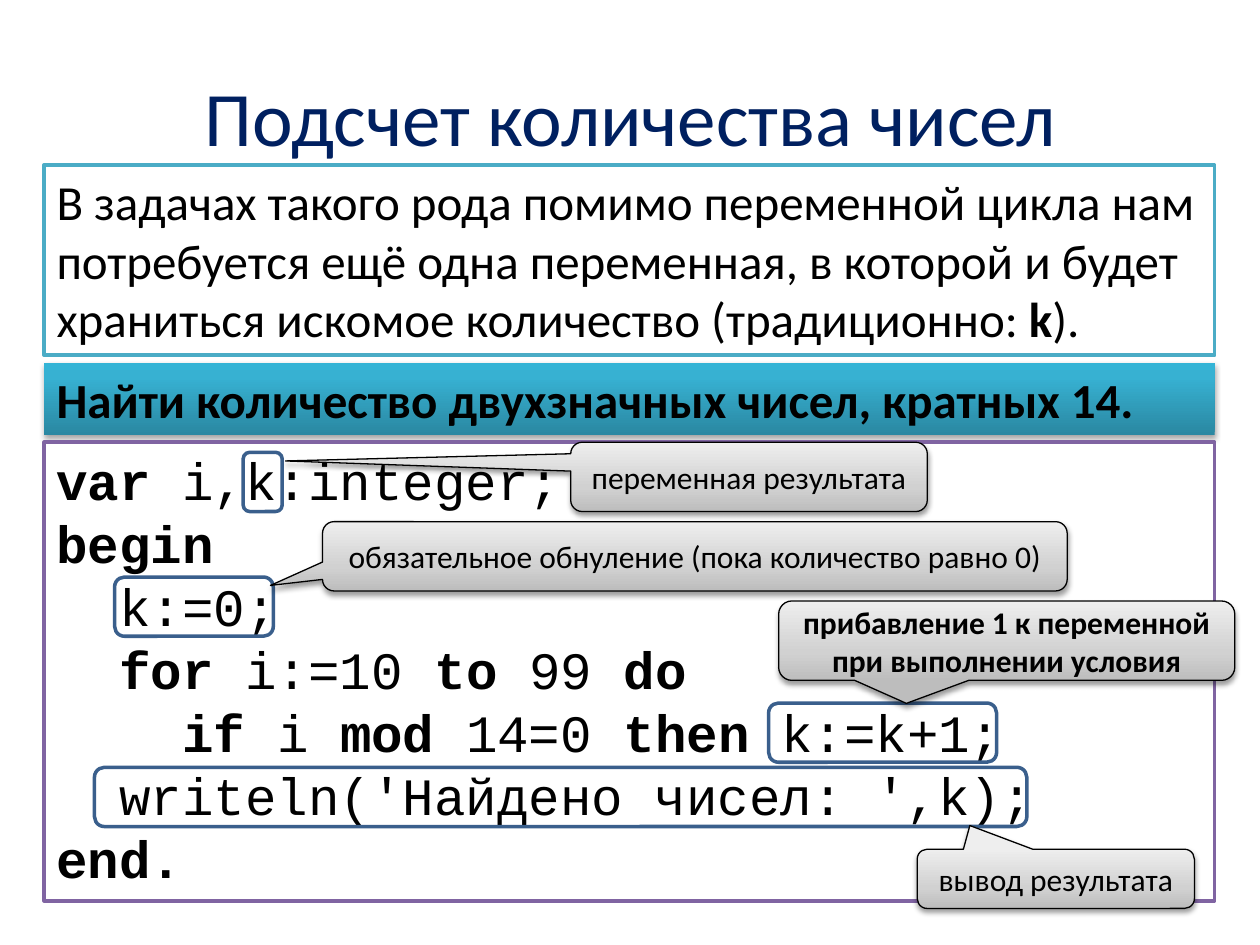
from dataclasses import dataclass

from lxml import etree
from pptx import Presentation
from pptx.dml.color import RGBColor
from pptx.enum.shapes import MSO_SHAPE
from pptx.enum.text import MSO_ANCHOR, PP_ALIGN
from pptx.oxml.ns import qn
from pptx.util import Inches, Pt

RECTANGLE = MSO_SHAPE.RECTANGLE
ROUNDED = MSO_SHAPE.ROUNDED_RECTANGLE
CALLOUT = MSO_SHAPE.ROUNDED_RECTANGULAR_CALLOUT
LEFT, CENTER = PP_ALIGN.LEFT, PP_ALIGN.CENTER
TOP, MIDDLE = MSO_ANCHOR.TOP, MSO_ANCHOR.MIDDLE


@dataclass(frozen=True)
class Theme:
    font: str = "Calibri"
    code_font: str = "Courier New"
    title_size: int = 44
    body_size: int = 28
    code_size: int = 30
    note_size: int = 18
    title: str = "002060"
    text: str = "000000"
    paper: str = "FFFFFF"
    intro_line: str = "4BACC6"
    code_line: str = "8064A2"
    frame_line: str = "3A5F8C"
    task_stops: tuple = ((0, "2A88A2"), (80, "37B1D2"), (100, "34B4D6"))
    note_stops: tuple = ((0, "BDBDBD"), (35, "D1D1D1"), (100, "EEEEEE"))


THEME = Theme()
PANEL_LEFT, PANEL_WIDTH = 0.35, 9.29
CODE_INDENT = 0.5  # two characters of the code font

# Each line of code: indent level, then (text, bold) spans
CODE = (
    (0, (("var ", True), ("i,k:integer;", False))),
    (0, (("begin", True),)),
    (1, (("k:=0;", False),)),
    (1, (("for ", True), ("i:=10 ", False), ("to", True), (" 99 ", False), ("do", True))),
    (2, (("if ", True), ("i ", False), ("mod ", True), ("14=0 ", False),
         ("then", True), (" k:=k+1;", False))),
    (1, (("writeln('Найдено чисел: ',k);", False),)),
    (0, (("end.", True),)),
)

# Each remark: framed code, callout box, callout tip, text, bold
REMARKS = (
    ((1.93, 3.59, 0.31, 0.47), (4.53, 3.51, 2.83, 0.55), (-1.3, -0.23),
     "переменная результата", False),
    ((0.91, 4.58, 1.26, 0.47), (2.56, 4.14, 5.91, 0.55), (-0.57, 0.42),
     "обязательное обнуление (пока количество равно 0)", False),
    ((6.1, 5.58, 1.81, 0.47), (6.18, 4.77, 3.62, 0.63), (-0.22, 0.79),
     "прибавление 1 к переменной при выполнении условия", True),
    ((0.75, 6.09, 7.4, 0.47), (7.28, 6.74, 2.2, 0.47), (-0.31, -0.9),
     "вывод результата", False),
)


def add_box(page, kind, box, fill=None, line=None, line_width=2):
    shape = page.shapes.add_shape(kind, *(Inches(value) for value in box))
    shape.shadow.inherit = False
    if fill:
        shape.fill.solid()
        shape.fill.fore_color.rgb = RGBColor.from_string(fill)
    else:
        shape.fill.background()
    if line:
        shape.line.color.rgb = RGBColor.from_string(line)
        shape.line.width = Pt(line_width)
    else:
        shape.line.fill.background()
    return shape


def set_gradient(shape, stops):
    """Fill from bottom to top with (percent, colour) stops."""
    shape.fill.gradient()
    shape.fill.gradient_angle = 90
    stop_list = shape.element.spPr.find(qn("a:gradFill")).find(qn("a:gsLst"))
    for old_stop in list(stop_list):
        stop_list.remove(old_stop)
    for percent, color in stops:
        stop = etree.SubElement(stop_list, qn("a:gs"), pos=str(percent * 1000))
        etree.SubElement(stop, qn("a:srgbClr"), val=color)


def set_shadow(shape, opacity):
    effects = shape.element.spPr.find(qn("a:effectLst"))
    shadow = etree.SubElement(effects, qn("a:outerShdw"), blurRad=str(Pt(3.1)),
                              dist=str(Pt(1.8)), dir="5400000", rotWithShape="0")
    color = etree.SubElement(shadow, qn("a:srgbClr"), val=THEME.text)
    etree.SubElement(color, qn("a:alpha"), val=str(opacity * 1000))


def write(shape, lines, size, font=THEME.font, color=THEME.text, align=LEFT, anchor=TOP):
    """Write lines, each an indent level with its (text, bold) spans."""
    frame = shape.text_frame
    frame.word_wrap = True
    frame.vertical_anchor = anchor
    for index, (level, spans) in enumerate(lines):
        para = frame.add_paragraph() if index else frame.paragraphs[0]
        para.alignment = align
        if level:
            para._p.get_or_add_pPr().set("marL", str(Inches(level * CODE_INDENT)))
        for text, bold in spans:
            span = para.add_run()
            span.text = text
            span.font.name = font
            span.font.size = Pt(size)
            span.font.bold = bold
            span.font.color.rgb = RGBColor.from_string(color)


def add_title(page, box):
    title = page.shapes.add_textbox(*(Inches(value) for value in box))
    write(title, [(0, [("Подсчет количества чисел", False)])], THEME.title_size,
          color=THEME.title, align=CENTER, anchor=MIDDLE)


def add_intro(page, box):
    panel = add_box(page, RECTANGLE, box, THEME.paper, THEME.intro_line)
    spans = [
        ("В задачах такого рода помимо переменной цикла нам потребуется ещё одна "
         "переменная, в которой и будет храниться искомое количество (традиционно: ", False),
        ("k", True),
        (").", False),
    ]
    write(panel, [(0, spans)], THEME.body_size)


def add_task(page, box):
    banner = add_box(page, RECTANGLE, box)
    set_gradient(banner, THEME.task_stops)
    set_shadow(banner, 35)
    write(banner, [(0, [("Найти количество двухзначных чисел, кратных 14.", True)])],
          THEME.body_size)


def add_code(page, box):
    panel = add_box(page, RECTANGLE, box, THEME.paper, THEME.code_line)
    write(panel, CODE, THEME.code_size, font=THEME.code_font)


def add_remark(page, frame_box, note_box, tip, text, bold):
    """Frame a piece of code and point a callout at it."""
    add_box(page, ROUNDED, frame_box, line=THEME.frame_line)
    note = add_box(page, CALLOUT, note_box, line=THEME.text, line_width=0.75)
    note.adjustments[0], note.adjustments[1] = tip
    set_gradient(note, THEME.note_stops)
    set_shadow(note, 38)
    write(note, [(0, [(text, bold)])], THEME.note_size, align=CENTER, anchor=MIDDLE)


def main():
    deck = Presentation()
    deck.slide_width, deck.slide_height = Inches(10), Inches(7.5)
    page = deck.slides.add_slide(deck.slide_layouts[6])
    add_title(page, (0.51, 0.29, 9, 1.25))
    add_intro(page, (PANEL_LEFT, 1.31, PANEL_WIDTH, 1.51))
    add_task(page, (PANEL_LEFT, 2.88, PANEL_WIDTH, 0.57))
    add_code(page, (PANEL_LEFT, 3.51, PANEL_WIDTH, 3.64))
    for remark in REMARKS:
        add_remark(page, *remark)
    deck.save("out.pptx")


if __name__ == "__main__":
    main()
